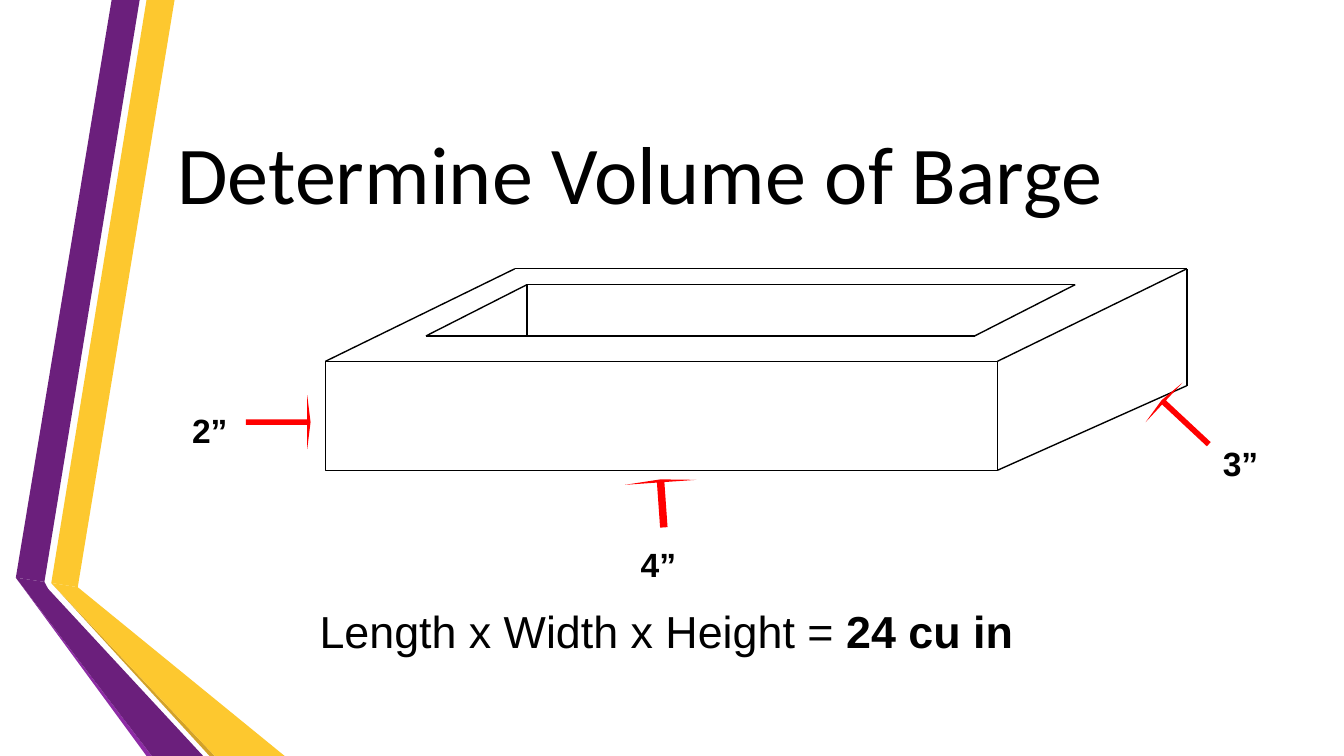
from itertools import pairwise

from lxml.etree import SubElement
from pptx import Presentation
from pptx.dml.color import RGBColor
from pptx.enum.shapes import MSO_CONNECTOR, MSO_SHAPE
from pptx.enum.text import MSO_ANCHOR, MSO_AUTO_SIZE, PP_ALIGN
from pptx.oxml.ns import qn
from pptx.util import Cm, Pt

WIDE, HIGH = 25.4, 14.29
BLACK, RED = "000000", "FF0000"
PURPLE, GOLD = "6B1F7C", "FDC82F"


def color(text):
    return RGBColor.from_string(text)


class Pen:
    def __init__(self, slide, font="Arial", size=18, weight=0.75):
        self.slide = slide
        self.shapes = slide.shapes
        self.font = font
        self.size = size
        self.weight = weight

    def style(self, run, font, size, bold):
        run.font.name = font
        run.font.size = Pt(size)
        run.font.bold = bold
        run.font.color.rgb = color(BLACK)

    def title(self, text, box):
        shape = self.shapes.title
        shape.left, shape.top, shape.width, shape.height = map(Cm, box)
        frame = shape.text_frame
        frame.text = text
        frame.auto_size = MSO_AUTO_SIZE.NONE
        frame.vertical_anchor = MSO_ANCHOR.MIDDLE
        line = frame.paragraphs[0]
        line.alignment = PP_ALIGN.LEFT
        self.style(line.runs[0], "Calibri", 44, False)

    def label(self, text, box, size=None, bold=True, tail=""):
        frame = self.shapes.add_textbox(*map(Cm, box)).text_frame
        frame.word_wrap = True
        frame.text = text
        line = frame.paragraphs[0]
        if tail:
            line.add_run().text = tail
        for run in line.runs:
            self.style(run, self.font, size or self.size, bold)
        if tail:
            line.runs[-1].font.bold = True

    def band(self, points, fill):
        spots = [(Cm(x), Cm(y)) for x, y in points]
        maker = self.shapes.build_freeform(*spots[0])
        maker.add_line_segments(spots[1:], close=True)
        self.paint(maker.convert_to_shape(), fill)

    def paint(self, shape, fill):
        shape.shadow.inherit = False
        shape.fill.solid()
        shape.fill.fore_color.rgb = color(fill)
        shape.line.fill.background()

    def front(self, box):
        shape = self.shapes.add_shape(MSO_SHAPE.RECTANGLE, *map(Cm, box))
        shape.shadow.inherit = False
        shape.fill.background()
        shape.line.color.rgb = color(BLACK)
        shape.line.width = Pt(self.weight)

    def edge(self, start, end):
        line = self.shapes.add_connector(
            MSO_CONNECTOR.STRAIGHT, *map(Cm, (*start, *end)))
        line.line.color.rgb = color(BLACK)
        line.line.width = Pt(self.weight)
        SubElement(line._element.spPr, qn("a:effectLst"))

    def arrow(self, box, turn):
        shape = self.shapes.add_shape(MSO_SHAPE.RIGHT_ARROW, *map(Cm, box))
        shape.adjustments[0] = 0.105
        shape.adjustments[1] = 0.061
        shape.rotation = turn
        self.paint(shape, RED)


def main():
    deck = Presentation()
    deck.slide_width, deck.slide_height = Cm(WIDE), Cm(HIGH)
    pen = Pen(deck.slides.add_slide(deck.slide_layouts[5]))

    gold, purple = (0.97, 11.02), (0.3, 10.92)
    bands = [
        ([gold, (1.47, 11.1), (3.3, 0), (2.77, 0)], GOLD),
        ([(2.64, 0), (2.11, 0), purple, (0.84, 11)], PURPLE),
        ([purple, (2.77, HIGH), (2.87, HIGH)], "8D2BA5"),
        ([gold, (3.96, HIGH), (4.06, HIGH)], "D3A229"),
        ([gold, (4.06, HIGH), (5.38, HIGH), (1.47, 11.1)], GOLD),
        ([(3.84, HIGH), (0.91, 11.13), (0.84, 11), purple, (2.87, HIGH)],
         PURPLE),
    ]
    for points, fill in bands:
        pen.band(points, fill)

    pen.title("Determine Volume of Barge", (3.1, 1.42, 20.88, 3.66))

    left, top, width, height = 6.15, 6.83, 12.7, 2.06
    right, base = left + width, top + height
    back, rear = 5.08, 3.58
    pen.front((left, top, width, height))
    rim = [(left, top), (left + rear, back), (right + rear, back),
           (right + rear, 7.29), (right, base)]
    well = [(9.96, 5.38), (20.32, 5.38), (18.42, 6.35), (8.05, 6.35)]
    for start, end in [*pairwise(rim), *pairwise([*well, well[0]]),
                       ((right, top), rim[2]), (well[0], (9.96, 6.35))]:
        pen.edge(start, end)

    sides = [
        ("2”", (3.38, 7.62), (4.65, 7.47, 1.22, 1.02), 0),
        ("4”", (11.86, 10.16), (12.06, 8.84, 0.91, 1.35), 266),
        ("3”", (22.86, 8.25), (21.79, 7.47, 1.22, 1.02), 223),
    ]
    for text, spot, box, turn in sides:
        pen.arrow(box, turn)
        pen.label(text, (*spot, 1.47, 0.76))

    pen.label("Length x Width x Height = ", (5.79, 11.28, 15.49, 0.94),
              size=24, bold=False, tail="24 cu in")

    deck.save("out.pptx")


if __name__ == "__main__":
    main()
